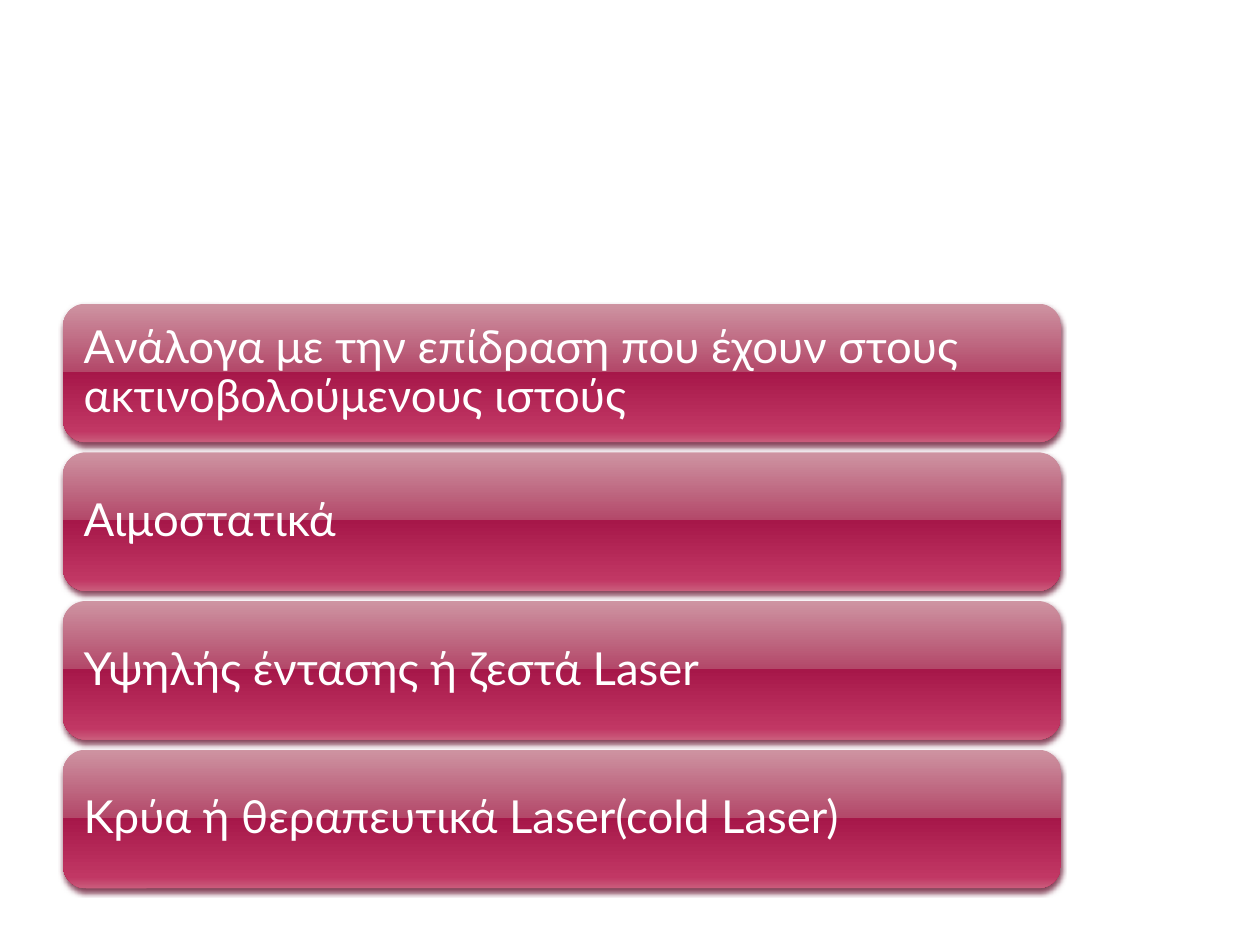
import pptx
import pptx.dml.color
import pptx.enum.shapes
import pptx.enum.text
import pptx.oxml
import pptx.oxml.ns
import pptx.util
from pptx.util import Inches

GLOSS = [(0, "CE94A2"), (49, "B34869"), (49, "A61749"), (92, "C13764"), (100, "CA5D7C")]
CATEGORIES = [
    "Aνάλογα με την επίδραση που έχουν στους ακτινοβολούμενους ιστούς",
    "Αιμοστατικά",
    "Υψηλής έντασης ή ζεστά Laser",
    "Κρύα ή θεραπευτικά Laser(cold Laser)",
]


def write(frame, text, *, font, size, color, line_spacing, inset):
    frame.word_wrap = True
    frame.vertical_anchor = pptx.enum.text.MSO_ANCHOR.MIDDLE
    frame.margin_left = frame.margin_right = Inches(inset)
    frame.margin_top = frame.margin_bottom = Inches(inset)
    paragraph = frame.paragraphs[0]
    paragraph.alignment = pptx.enum.text.PP_ALIGN.LEFT
    paragraph.line_spacing = line_spacing
    run = paragraph.add_run()
    run.text = text
    run.font.name = font
    run.font.size = pptx.util.Pt(size)
    run.font.color.rgb = pptx.dml.color.RGBColor.from_string(color)


def add_gloss(bar):
    """Glossy vertical gradient with a soft shadow below."""
    bar.fill.gradient()
    bar.fill.gradient_angle = 270
    properties = bar.fill._xPr
    stops = properties.find(".//" + pptx.oxml.ns.qn("a:gsLst"))
    for stop in list(stops):
        stops.remove(stop)
    namespace = pptx.oxml.ns.nsdecls("a")
    for position, color in GLOSS:
        stops.append(pptx.oxml.parse_xml(
            f'<a:gs {namespace} pos="{position * 1000}"><a:srgbClr val="{color}"/></a:gs>'))
    bar.line.fill.background()
    bar.shadow.inherit = False
    effects = properties.find(pptx.oxml.ns.qn("a:effectLst"))
    effects.append(pptx.oxml.parse_xml(
        f'<a:outerShdw {namespace} blurRad="{pptx.util.Pt(3.1)}" dist="{pptx.util.Pt(2)}" '
        'dir="5400000" algn="ctr" rotWithShape="0">'
        '<a:srgbClr val="722640"><a:alpha val="83000"/></a:srgbClr></a:outerShdw>'))


presentation = pptx.Presentation()
presentation.slide_width = Inches(10)
presentation.slide_height = Inches(7.5)
slide = presentation.slides.add_slide(presentation.slide_layouts[6])

# Stack of laser categories
bar_top, bar_pitch = 2.41, 1.18
for index, category in enumerate(CATEGORIES):
    bar = slide.shapes.add_shape(
        pptx.enum.shapes.MSO_SHAPE.ROUNDED_RECTANGLE,
        Inches(0.5), Inches(bar_top + index * bar_pitch), Inches(7.92), Inches(1.1))
    add_gloss(bar)
    write(bar.text_frame, category, font="Lato", size=26, color="FFFFFF",
          line_spacing=0.9, inset=0.11)

presentation.save("out.pptx")
